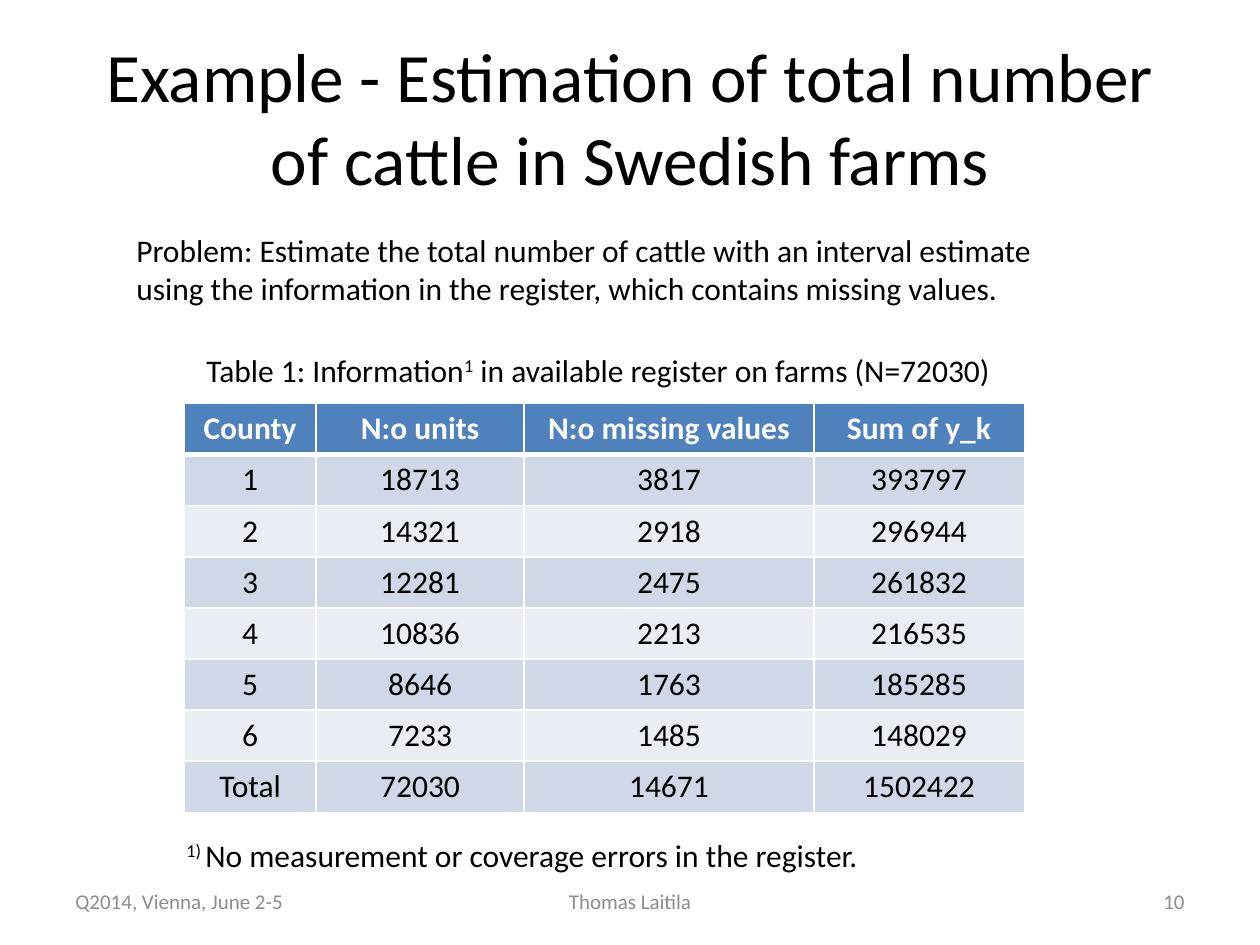
from dataclasses import dataclass

import pptx
import pptx.dml.color
import pptx.enum.text
import pptx.oxml
import pptx.oxml.ns
import pptx.util

Pt = pptx.util.Pt
Align = pptx.enum.text.PP_ALIGN
Anchor = pptx.enum.text.MSO_ANCHOR


@dataclass(frozen=True)
class Theme:
    font: str = "Calibri"
    title_size: float = 39.6
    body_size: float = 18
    footer_size: float = 12
    ink: str = "000000"
    muted: str = "8C8C8C"
    white: str = "FFFFFF"
    header: str = "4F81BD"
    bands: tuple = ("D0D8E8", "E9EDF4")


THEME = Theme()

TABLE_ROWS = [
    ("County", "N:o units", "N:o missing values", "Sum of y_k"),
    ("1", "18713", "3817", "393797"),
    ("2", "14321", "2918", "296944"),
    ("3", "12281", "2475", "261832"),
    ("4", "10836", "2213", "216535"),
    ("5", "8646", "1763", "185285"),
    ("6", "7233", "1485", "148029"),
    ("Total", "72030", "14671", "1502422"),
]
COLUMN_WIDTHS = (75.6, 118.8, 165.6, 120.24)


def rgb(color):
    return pptx.dml.color.RGBColor.from_string(color)


def add_run(paragraph, text, size, color, bold=False, superscript=False):
    run = paragraph.add_run()
    run.text = text
    run.font.name = THEME.font
    run.font.size = Pt(size)
    run.font.bold = bold
    run.font.color.rgb = rgb(color)
    if superscript:
        run.font._element.set("baseline", "30000")


def add_text(slide, box, paragraphs, size=THEME.body_size, color=THEME.ink,
             align=Align.LEFT, anchor=Anchor.TOP, wrap=True):
    shape = slide.shapes.add_textbox(*map(Pt, box))
    frame = shape.text_frame
    frame.word_wrap = wrap
    frame.vertical_anchor = anchor
    for index, runs in enumerate(paragraphs):
        paragraph = frame.paragraphs[0] if index == 0 else frame.add_paragraph()
        paragraph.alignment = align
        for text, superscript in runs:
            add_run(paragraph, text, size, color, superscript=superscript)


def add_title(slide, box):
    title = "Example - Estimation of total number of cattle in Swedish farms"
    add_text(slide, box, [[(title, False)]], THEME.title_size,
             align=Align.CENTER, anchor=Anchor.MIDDLE)


def add_problem(slide, box):
    lines = (
        "Problem: Estimate the total number of cattle with an interval estimate",
        "using the information in the register, which contains missing values.",
    )
    add_text(slide, box, [[(line, False)] for line in lines], wrap=False)


def add_caption(slide, box):
    runs = [("Table 1: Information", False), ("1", True),
            (" in available register on farms (N=72030)", False)]
    add_text(slide, box, [runs], wrap=False)


def add_footnote(slide, box):
    runs = [("1) ", True),
            ("No measurement or coverage errors in the register.", False)]
    add_text(slide, box, [runs])


def set_borders(cell, bottom_width):
    properties = cell._tc.get_or_add_tcPr()
    for side, width in (("L", 1), ("R", 1), ("T", 1), ("B", bottom_width)):
        properties.append(pptx.oxml.parse_xml(
            f'<a:ln{side} {pptx.oxml.ns.nsdecls("a")} w="{Pt(width)}">'
            f'<a:solidFill><a:srgbClr val="{THEME.white}"/></a:solidFill>'
            f'</a:ln{side}>'))


def add_register_table(slide, box):
    frame = slide.shapes.add_table(len(TABLE_ROWS), len(COLUMN_WIDTHS), *map(Pt, box))
    table = frame.table
    for column, width in zip(table.columns, COLUMN_WIDTHS):
        column.width = Pt(width)
    for row_index, values in enumerate(TABLE_ROWS):
        is_header = row_index == 0
        fill = THEME.header if is_header else THEME.bands[(row_index - 1) % 2]
        color = THEME.white if is_header else THEME.ink
        for column_index, value in enumerate(values):
            cell = table.cell(row_index, column_index)
            set_borders(cell, 3 if is_header else 1)
            cell.fill.solid()
            cell.fill.fore_color.rgb = rgb(fill)
            paragraph = cell.text_frame.paragraphs[0]
            paragraph.alignment = Align.CENTER
            add_run(paragraph, value, THEME.body_size, color, bold=is_header)


def add_footer(slide, box):
    left, top, width, height = box
    side_width, center_width = 168, 228
    parts = (
        ("Q2014, Vienna, June 2-5", left, side_width, Align.LEFT),
        ("Thomas Laitila", left + (width - center_width) / 2, center_width, Align.CENTER),
        ("10", left + width - side_width, side_width, Align.RIGHT),
    )
    for text, part_left, part_width, align in parts:
        add_text(slide, (part_left, top, part_width, height), [[(text, False)]],
                 THEME.footer_size, THEME.muted, align, Anchor.MIDDLE)


def main():
    presentation = pptx.Presentation()
    presentation.slide_width = Pt(720)
    presentation.slide_height = Pt(540)
    slide = presentation.slides.add_slide(presentation.slide_layouts[6])
    add_title(slide, (36, 21.6, 648, 90))
    add_register_table(slide, (105.12, 230.6, sum(COLUMN_WIDTHS), 233.6))
    add_caption(slide, (110.9, 196.8, 471.6, 29))
    add_footnote(slide, (99.4, 474, 572.4, 29))
    add_problem(slide, (70.8, 128.4, 551.5, 51))
    add_footer(slide, (36, 500.5, 648, 28.8))
    presentation.save("out.pptx")


if __name__ == "__main__":
    main()
